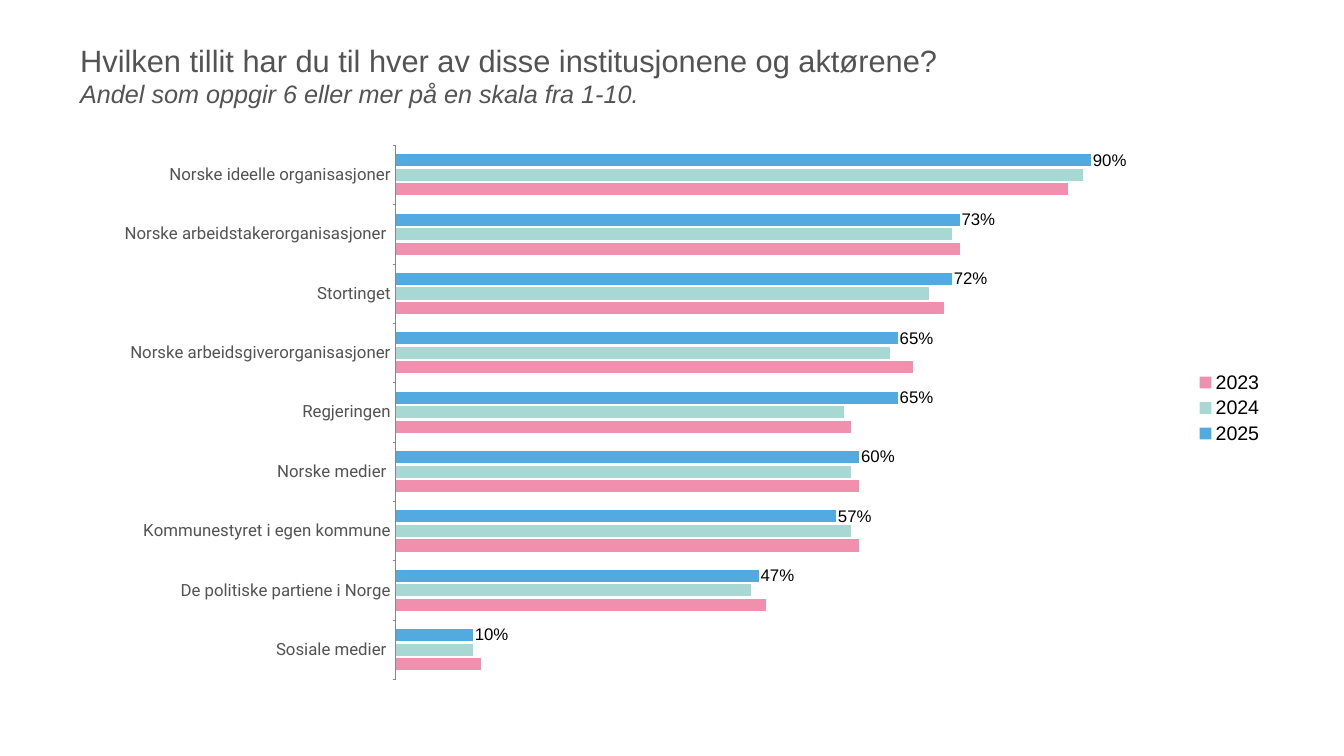
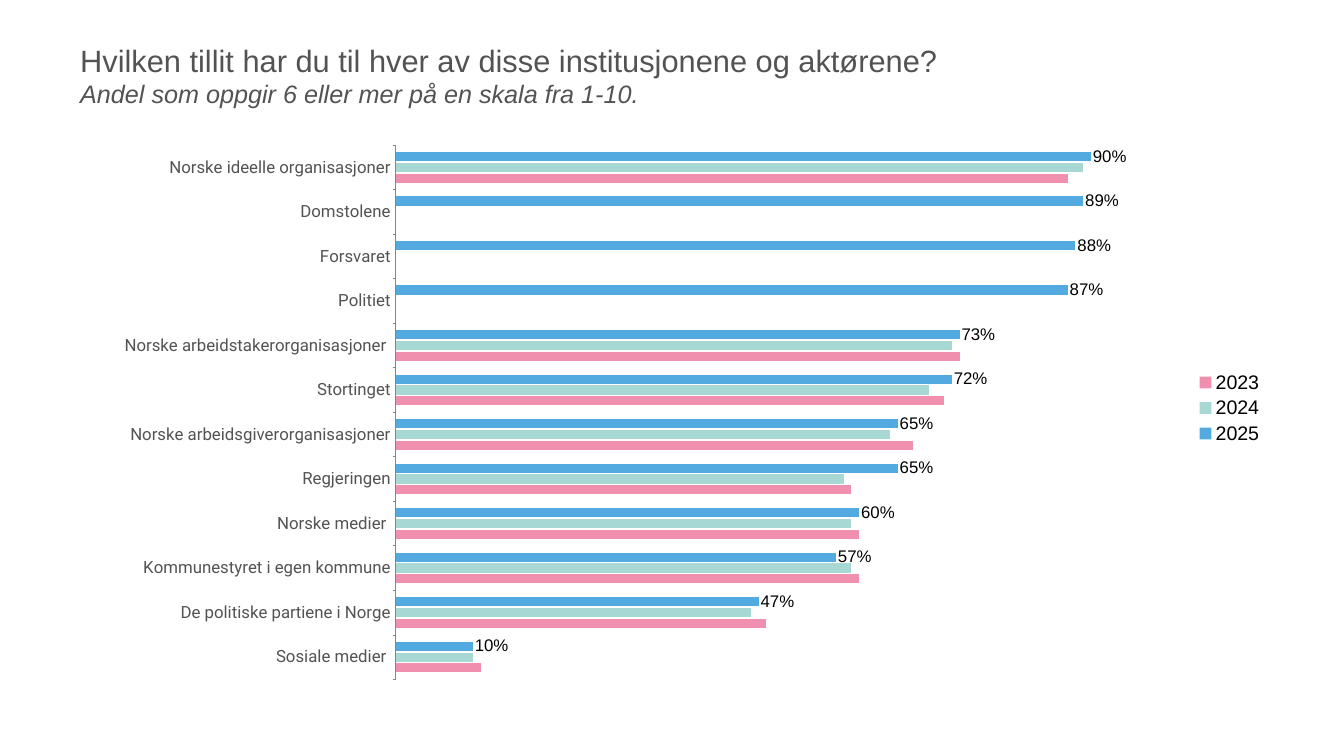
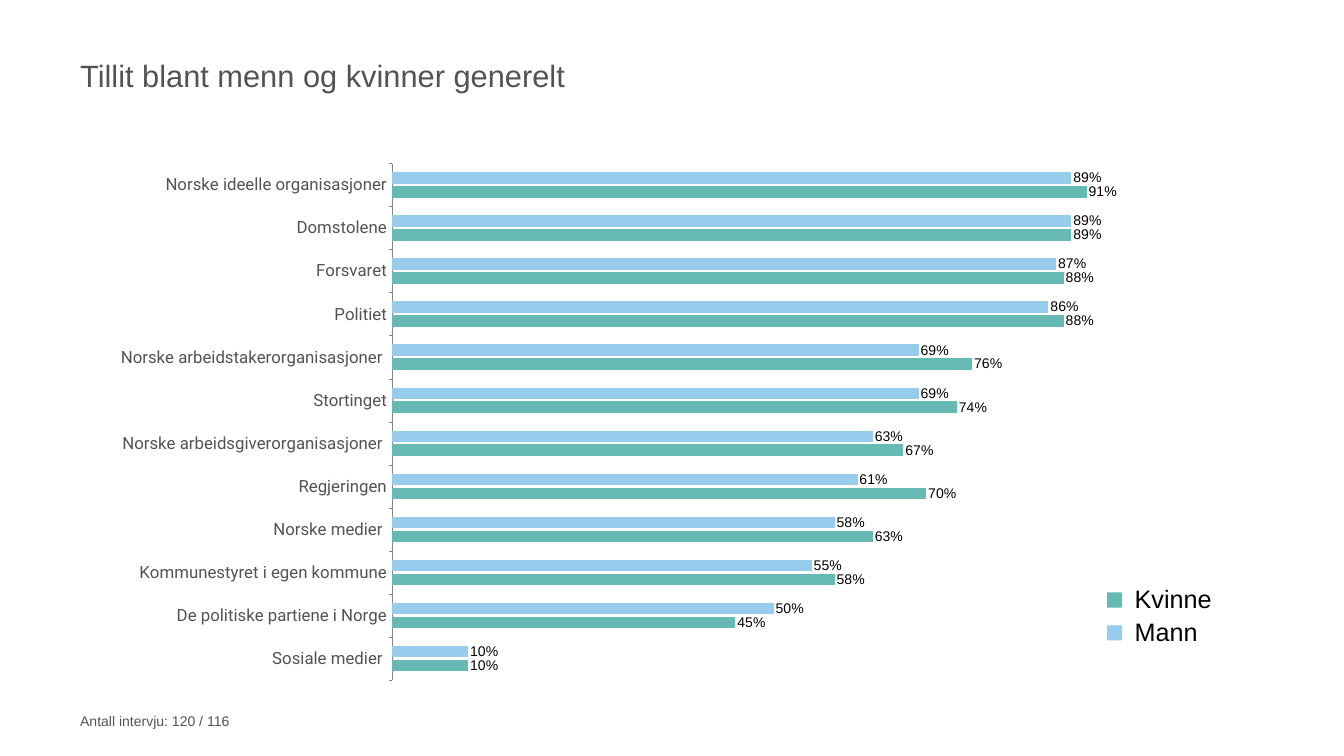
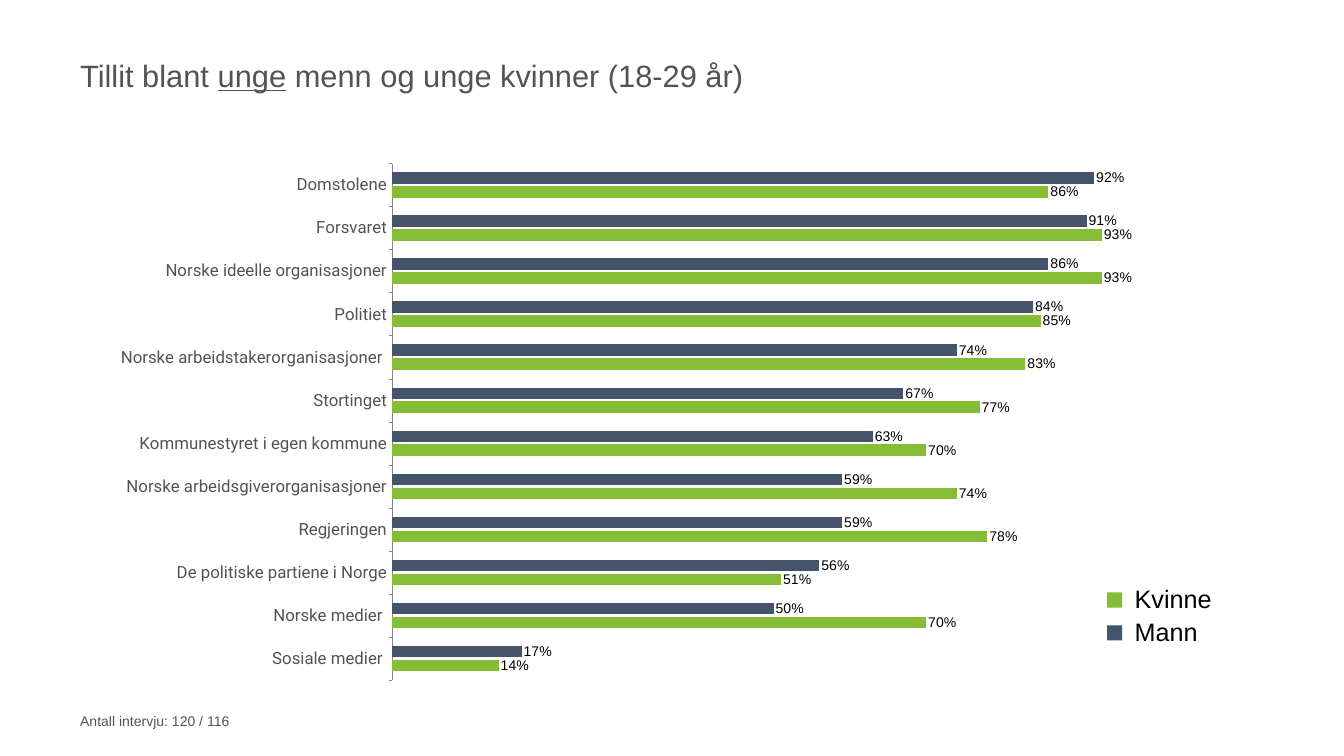
from dataclasses import dataclass
from typing import Optional

from lxml import etree
from pptx import Presentation
from pptx import util as u
from pptx.chart import data
from pptx.dml import color
from pptx.enum import chart as ch
from pptx.enum import text
from pptx.oxml import ns

HUES = {
    "ink": "535353", "black": "000000", "axis": "868686",
    "blue": "52AAE0", "mint": "A8D8D4", "pink": "F190AE",
    "sky": "97CCEC", "teal": "66BAB3", "navy": "44546A", "green": "85BD37",
}
LEFT = 3.89
PLOT = {"x": 0.267, "y": 0.033, "w": 0.648, "h": 0.949}
NAMES = [
    "Norske ideelle organisasjoner", "Domstolene", "Forsvaret", "Politiet",
    "Norske arbeidstakerorganisasjoner ", "Stortinget",
    "Norske arbeidsgiverorganisasjoner", "Regjeringen", "Norske medier ",
    "Kommunestyret i egen kommune", "De politiske partiene i Norge",
    "Sosiale medier ",
]


@dataclass
class Box:
    left: float
    top: float
    width: float
    height: float

    def place(self) -> list:
        return [u.Cm(n) for n in (self.left, self.top, self.width, self.height)]


@dataclass
class Part:
    text: str
    size: int = 44
    italic: bool = False
    under: bool = False
    fresh: bool = False


@dataclass
class Bars:
    name: str
    hue: str
    vals: list
    tags: bool = True


@dataclass
class Style:
    box: Box
    tag: int
    key: int
    spot: Optional[dict] = None


@dataclass
class Page:
    title: list
    names: list
    bars: list
    style: Style
    foot: str = ""


HEAD = Box(LEFT, 1.19, 60.1, 5.18)
FOOT = Box(LEFT, 35.31, 48.72, 2.03)
YEARLY = Style(Box(LEFT, 6.38, 60.1, 28.37), 24, 28)
GENDER = Style(Box(LEFT, 7.34, 59.39, 27.43), 20, 36, {"x": 0.867, "y": 0.8})

ASK = [
    Part("Hvilken tillit har du til hver av disse institusjonene og aktørene? "),
    Part("Andel som oppgir 6 eller mer på en skala fra 1-10.", 36, italic=True, fresh=True),
]
COUNT = "Antall intervju: 120 / 116"
GAP = [None] * 3
YEARS = [
    Bars("2025", "blue", [90, 89, 88, 87, 73, 72, 65, 65, 60, 57, 47, 10]),
    Bars("2024", "mint", [89, *GAP, 72, 69, 64, 58, 59, 59, 46, 10], False),
    Bars("2023", "pink", [87, *GAP, 73, 71, 67, 59, 60, 60, 48, 11], False),
]
ALL = [
    Bars(" Mann", "sky", [89, 89, 87, 86, 69, 69, 63, 61, 58, 55, 50, 10]),
    Bars(" Kvinne", "teal", [91, 89, 88, 88, 76, 74, 67, 70, 63, 58, 45, 10]),
]
YOUNG = [
    Bars(" Mann", "navy", [92, 91, 86, 84, 74, 67, 63, 59, 59, 56, 50, 17]),
    Bars(" Kvinne", "green", [86, 93, 93, 85, 83, 77, 70, 74, 78, 51, 70, 14]),
]
RANK = [1, 2, 0, 3, 4, 5, 9, 6, 7, 10, 8, 11]


def trim(items: list) -> list:
    return items[:1] + items[4:]


PAGES = [
    Page(ASK, trim(NAMES),
         [Bars(b.name, b.hue, trim(b.vals), b.tags) for b in YEARS], YEARLY),
    Page(ASK, NAMES, YEARS, YEARLY),
    Page([Part("Tillit blant menn og kvinner generelt")],
         [n + " " if n == NAMES[6] else n for n in NAMES], ALL, GENDER, COUNT),
    Page([Part("Tillit blant "), Part("unge", under=True),
          Part(" menn og unge kvinner (18-29 år)")],
         [NAMES[i] for i in RANK], YOUNG, GENDER, COUNT),
]


def rgb(hue: str) -> color.RGBColor:
    return color.RGBColor.from_string(HUES[hue])


def dress(font, size: int, hue: str = "black", face: str = "Arial") -> None:
    font.name = face
    font.size = u.Pt(size)
    font.color.rgb = rgb(hue)


def write(slide, box: Box, parts: list) -> None:
    frame = slide.shapes.add_textbox(*box.place()).text_frame
    frame.word_wrap = True
    frame.vertical_anchor = text.MSO_ANCHOR.MIDDLE
    frame.margin_left = frame.margin_right = u.Cm(0.15)
    frame.margin_top = frame.margin_bottom = u.Cm(0.15)
    para = frame.paragraphs[0]
    for part in parts:
        if part.fresh:
            para.add_line_break()
        run = para.add_run()
        run.text = part.text
        dress(run.font, part.size, "ink")
        run.font.italic = part.italic
        run.font.underline = part.under


def arrange(node, index: int, spot: dict, inner: bool = False) -> None:
    for old in node.findall(ns.qn("c:layout")):
        node.remove(old)
    layout = etree.Element(ns.qn("c:layout"))
    hand = etree.SubElement(layout, ns.qn("c:manualLayout"))
    rules = {"layoutTarget": "inner"} if inner else {}
    rules.update(xMode="edge", yMode="edge", **spot)
    for key, val in rules.items():
        etree.SubElement(hand, ns.qn("c:" + key)).set("val", str(val))
    node.insert(index, layout)


def draw(slide, page: Page) -> None:
    style = page.style
    facts = data.CategoryChartData(number_format="0%")
    facts.categories = page.names
    for bars in page.bars:
        facts.add_series(bars.name, [None if v is None else v / 100 for v in bars.vals])
    kind = ch.XL_CHART_TYPE.BAR_CLUSTERED
    chart = slide.shapes.add_chart(kind, *style.box.place(), facts).chart
    dress(chart.font, 10)
    chart.has_title = False

    plot = chart.plots[0]
    plot.gap_width = 150
    plot.overlap = -20
    plot.vary_by_categories = False
    for row, bars in zip(plot.series, page.bars):
        row.format.fill.solid()
        row.format.fill.fore_color.rgb = rgb(bars.hue)
        row.invert_if_negative = False
        if bars.tags:
            tags = row.data_labels
            tags.show_value = True
            tags.number_format = "0%"
            tags.number_format_is_linked = False
            tags.position = ch.XL_LABEL_POSITION.OUTSIDE_END
            dress(tags.font, style.tag)

    cats = chart.category_axis
    cats.reverse_order = True
    cats.has_major_gridlines = False
    cats.major_tick_mark = ch.XL_TICK_MARK.OUTSIDE
    cats.format.line.color.rgb = rgb("axis")
    dress(cats.tick_labels.font, 24, "ink", "Roboto")
    vals = chart.value_axis
    vals.minimum_scale = 0
    vals.maximum_scale = 1
    vals.has_major_gridlines = False
    vals.visible = False

    chart.has_legend = True
    key = chart.legend
    key.position = ch.XL_LEGEND_POSITION.RIGHT
    key.include_in_layout = False
    dress(key.font, style.key)
    if style.spot:
        arrange(key._element, 1, style.spot)
    area = chart._chartSpace.find(".//" + ns.qn("c:plotArea"))
    arrange(area, 0, PLOT, inner=True)


def main() -> None:
    deck = Presentation()
    deck.slide_width = u.Cm(67.74)
    deck.slide_height = u.Cm(38.1)
    for page in PAGES:
        slide = deck.slides.add_slide(deck.slide_layouts[6])
        write(slide, HEAD, page.title)
        if page.foot:
            write(slide, FOOT, [Part(page.foot, 20)])
        draw(slide, page)
    deck.save("out.pptx")


if __name__ == "__main__":
    main()
